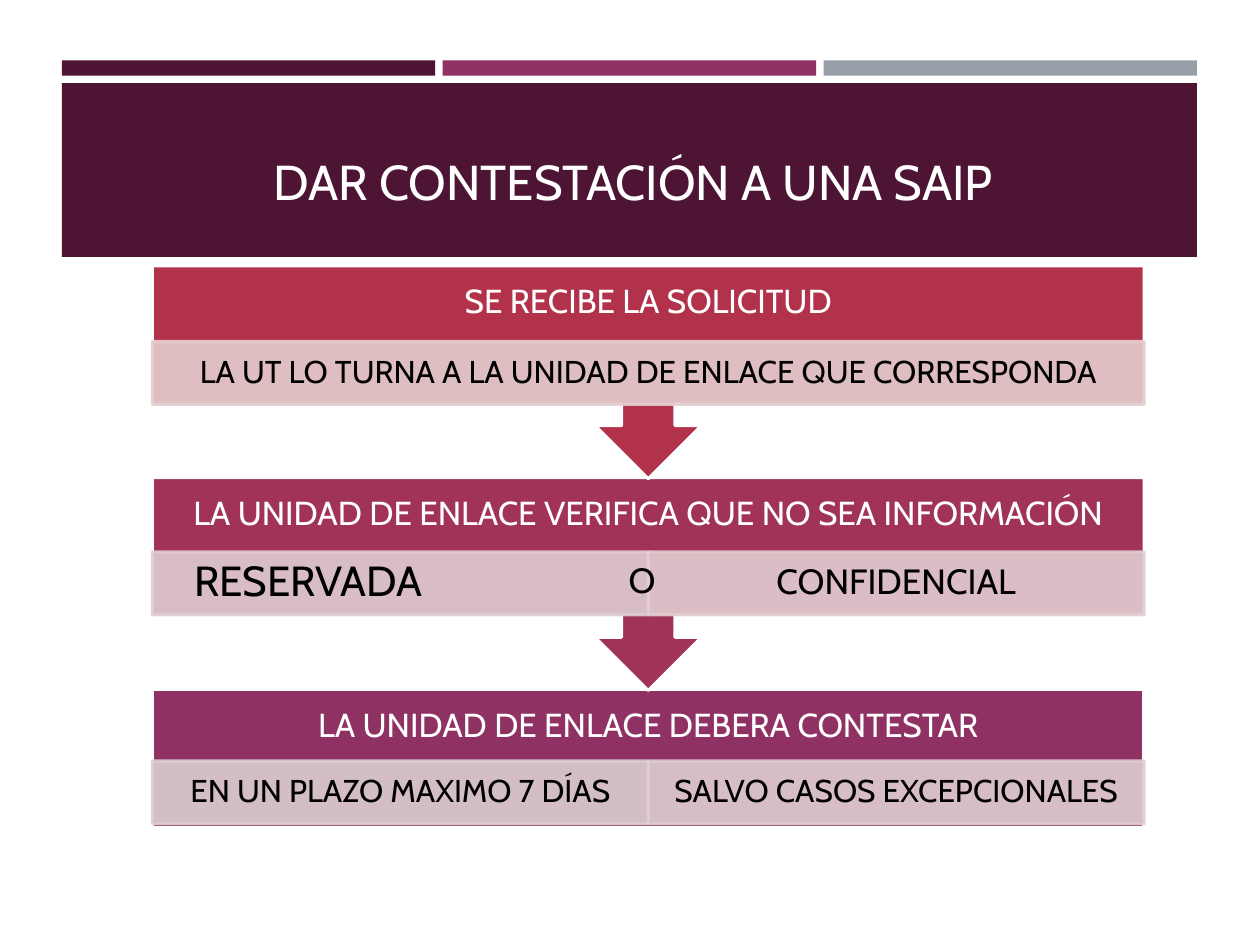
from pptx import Presentation
from pptx.dml.color import RGBColor
from pptx.enum.shapes import MSO_SHAPE as SHAPE
from pptx.enum.text import MSO_ANCHOR as ANCHOR, PP_ALIGN as ALIGN
from pptx.oxml.ns import qn
from pptx.util import Inches, Pt
from lxml.etree import SubElement

COLORS = {"plum": "4D1434", "purple": "903163", "gray": "969FA7",
          "red": "B2324B", "berry": "A1325A", "white": "FFFFFF", "black": "000000"}
FONT = "Cabin"
TITLE = "DAR CONTESTACIÓN A UNA SAIP"
STRIPES = ["plum", "purple", "gray"]
STEPS = [
    {"head": "SE RECIBE LA SOLICITUD", "color": "red", "offset": 0.6,
     "cells": [("LA UT LO TURNA A LA UNIDAD DE ENLACE QUE CORRESPONDA", 18, "E4CED0")]},
    {"head": "LA UNIDAD DE ENLACE VERIFICA QUE NO SEA INFORMACIÓN", "color": "berry", "offset": 0.59,
     "cells": [("RESERVADA", 24, "E0CDD2"), ("CONFIDENCIAL", 20, "E2CDD1")]},
    {"head": "LA UNIDAD DE ENLACE DEBERA CONTESTAR", "color": "purple", "offset": 0.57,
     "cells": [("EN UN PLAZO MAXIMO 7 DÍAS", 18, "DBCED3"),
               ("SALVO CASOS EXCEPCIONALES", 18, "DECDD2")]},
]
LEFT_ALIGNED = "RESERVADA"
BAND_X, BAND_W, GAP = 0.49, 9.01, 0.06
FLOW_X, FLOW_Y, FLOW_W, PITCH = 1.21, 2.11, 7.87, 1.68
HEAD_H, CELL_H, CALLOUT_H, LAST_H = 0.59, 0.5, 1.69, 1.1

prs = Presentation()
prs.slide_width, prs.slide_height = Inches(10), Inches(7.5)
slide = prs.slides.add_slide(prs.slide_layouts[6])


def rgb(color):
    return RGBColor.from_string(COLORS.get(color, color))


def add_box(box, color, line=None, kind=SHAPE.RECTANGLE, alpha=None):
    sp = slide.shapes.add_shape(kind, *map(Inches, box))
    sp.shadow.inherit = False
    sp.fill.solid()
    sp.fill.fore_color.rgb = rgb(color)
    if line:
        sp.line.color.rgb = rgb(line)
        sp.line.width = Pt(1.75)
    else:
        sp.line.fill.background()
    if alpha:
        for clr in sp._element.spPr.iter(qn("a:srgbClr")):
            SubElement(clr, qn("a:alpha")).set("val", str(alpha * 1000))
    return sp


def write(sp, text, size, color, align=ALIGN.CENTER, anchor=ANCHOR.MIDDLE,
          inset=(0.1, 0.05), spacing=0.9, wrap=True):
    tf = sp.text_frame
    tf.word_wrap = wrap
    tf.vertical_anchor = anchor
    tf.margin_left = tf.margin_right = Inches(inset[0])
    tf.margin_top = tf.margin_bottom = Inches(inset[1])
    p = tf.paragraphs[0]
    p.alignment, p.line_spacing = align, spacing
    r = p.add_run()
    r.text = text
    r.font.name, r.font.size, r.font.color.rgb = FONT, Pt(size), rgb(color)


def add_text(box, *args, **style):
    write(slide.shapes.add_textbox(*map(Inches, box)), *args, **style)


stripe_w = (BAND_W - GAP * (len(STRIPES) - 1)) / len(STRIPES)
for i, color in enumerate(STRIPES):
    add_box((BAND_X + i * (stripe_w + GAP), 0.48, stripe_w, 0.12), color)
add_box((BAND_X, 0.66, BAND_W, 1.38), "plum")
add_text((0.94, 0.47, 8.17, 1.25), TITLE, 28, "white", anchor=ANCHOR.BOTTOM, spacing=1.0)

for i, step in reversed(list(enumerate(STEPS))):
    y = FLOW_Y + i * PITCH
    if i == len(STEPS) - 1:
        add_box((FLOW_X, y, FLOW_W, LAST_H), step["color"], "white")
    else:
        callout = add_box((FLOW_X, y, FLOW_W, CALLOUT_H), step["color"], "white",
                          SHAPE.UP_ARROW_CALLOUT)
        callout.rotation = 180
    add_text((FLOW_X, y, FLOW_W, HEAD_H), step["head"], 19, "white", inset=(0.15, 0.15))
    cell_w = FLOW_W / len(step["cells"])
    for j, (text, size, color) in enumerate(step["cells"]):
        cell = add_box((FLOW_X + j * cell_w, y + step["offset"], cell_w, CELL_H),
                       color, color, alpha=90)
        left = text == LEFT_ALIGNED
        write(cell, text, size, "black", ALIGN.LEFT if left else ALIGN.CENTER,
              inset=(0.33 if left else 0.14, 0.03))

add_text((4.89, 4.38, 0.31, 0.44), "O", 20, "black", ALIGN.LEFT, ANCHOR.TOP,
         spacing=1.0, wrap=False)

prs.save("out.pptx")
